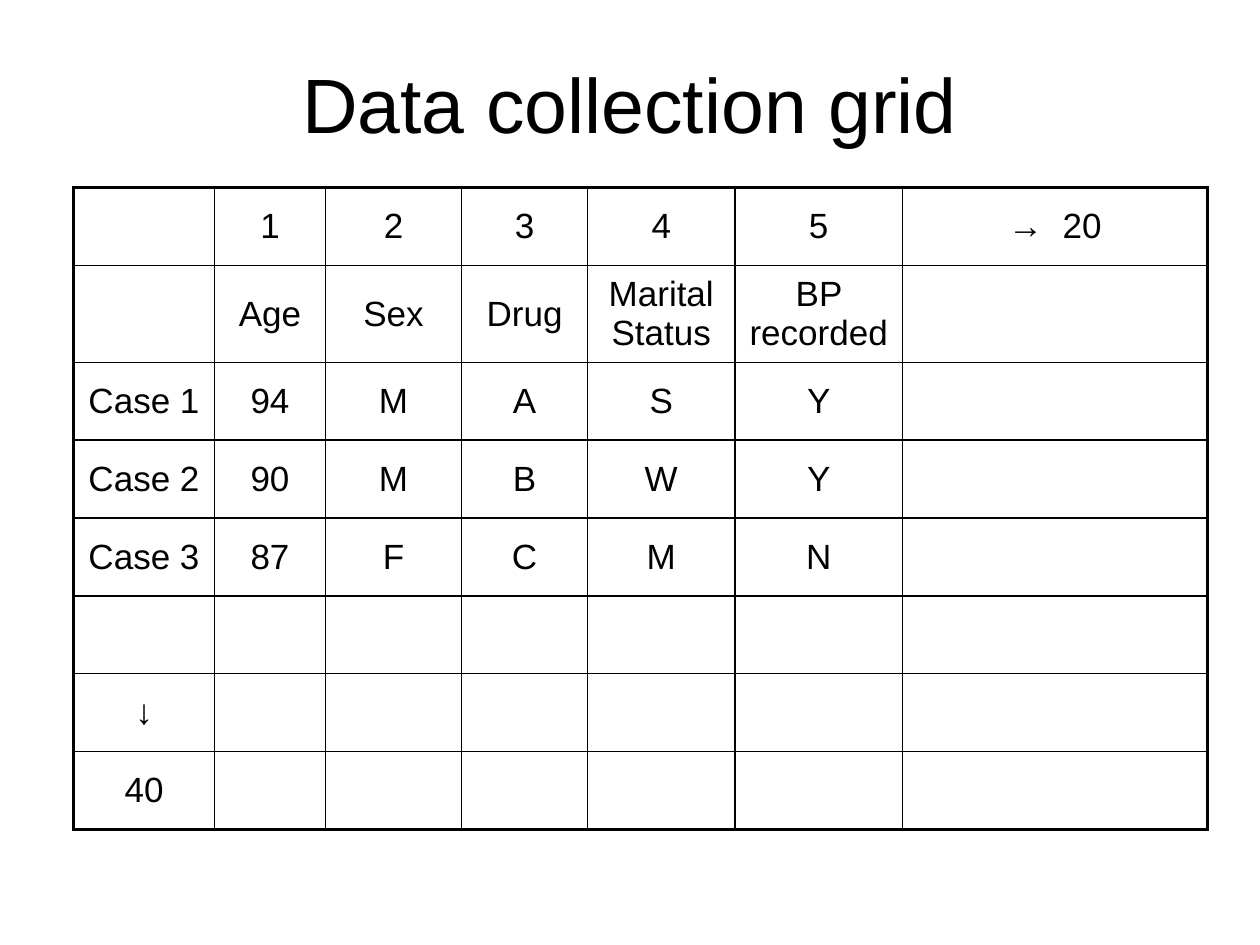
from lxml import etree
from pptx import Presentation
from pptx.dml.color import RGBColor
from pptx.enum.text import MSO_ANCHOR, PP_ALIGN
from pptx.oxml.ns import qn
from pptx.util import Pt

MIDDLE = MSO_ANCHOR.MIDDLE
CENTER = PP_ALIGN.CENTER

# Content
TITLE = "Data collection grid"
GRID = [
    ["", "1", "2", "3", "4", "5", "→  20"],
    ["", "Age", "Sex", "Drug", "Marital Status", "BP recorded", ""],
    ["Case 1", "94", "M", "A", "S", "Y", ""],
    ["Case 2", "90", "M", "B", "W", "Y", ""],
    ["Case 3", "87", "F", "C", "M", "N", ""],
    [""] * 7,
    ["↓"] + [""] * 6,
    ["40"] + [""] * 6,
]

# Theme and layout, in points
THEME = {
    "font": "Arial", "ink": "000000",
    "title_size": 44, "cell_size": 20,
    "outer_line": 2.25, "inner_line": 1,
}
SLIDE_SIZE = (720, 540)
TITLE_BOX = (36, 21.6, 648, 74.2)
TABLE_ORIGIN = (42, 107.2)
COLUMN_WIDTHS = [80.6, 63.4, 77.8, 72, 84.2, 95.8, 174.2]
ROW_HEIGHT, LABEL_ROW_HEIGHT = 44.5, 55.4
ROW_HEIGHTS = [LABEL_ROW_HEIGHT if row == 1 else ROW_HEIGHT for row in range(len(GRID))]


def write_text(text_frame, text, size, color=THEME["ink"], align=CENTER):
    paragraph = text_frame.paragraphs[0]
    paragraph.alignment = align
    run = paragraph.add_run()
    run.text = text
    run.font.name = THEME["font"]
    run.font.size = Pt(size)
    run.font.color.rgb = RGBColor.from_string(color)


def set_borders(cell, widths):
    """Draw the left, right, top and bottom borders, in that order."""
    properties = cell._tc.get_or_add_tcPr()
    for position, (side, width) in enumerate(zip("LRTB", widths)):
        line = etree.Element(qn(f"a:ln{side}"), w=str(Pt(width)))
        fill = etree.SubElement(line, qn("a:solidFill"))
        etree.SubElement(fill, qn("a:srgbClr"), val=THEME["ink"])
        properties.insert(position, line)


def add_title(slide):
    title = slide.shapes.title
    title.left, title.top, title.width, title.height = map(Pt, TITLE_BOX)
    title.text_frame.vertical_anchor = MIDDLE
    write_text(title.text_frame, TITLE, THEME["title_size"])


def add_grid(slide):
    box = (*TABLE_ORIGIN, sum(COLUMN_WIDTHS), sum(ROW_HEIGHTS))
    table = slide.shapes.add_table(len(GRID), len(COLUMN_WIDTHS), *map(Pt, box)).table
    table.first_row = table.horz_banding = False
    for column, width in zip(table.columns, COLUMN_WIDTHS):
        column.width = Pt(width)
    for row, height in zip(table.rows, ROW_HEIGHTS):
        row.height = Pt(height)

    # Cells, with a heavier line around the outside
    last_row, last_column = len(GRID) - 1, len(COLUMN_WIDTHS) - 1
    for row, texts in enumerate(GRID):
        for column, text in enumerate(texts):
            cell = table.cell(row, column)
            cell.fill.background()
            cell.vertical_anchor = MIDDLE
            if text:
                write_text(cell.text_frame, text, THEME["cell_size"])
            outer_sides = (column == 0, column == last_column, row == 0, row == last_row)
            set_borders(cell, [THEME["outer_line" if outer else "inner_line"]
                               for outer in outer_sides])


def main():
    presentation = Presentation()
    presentation.slide_width, presentation.slide_height = map(Pt, SLIDE_SIZE)
    slide = presentation.slides.add_slide(presentation.slide_layouts.get_by_name("Title Only"))
    add_grid(slide)
    add_title(slide)
    presentation.save("out.pptx")


if __name__ == "__main__":
    main()
